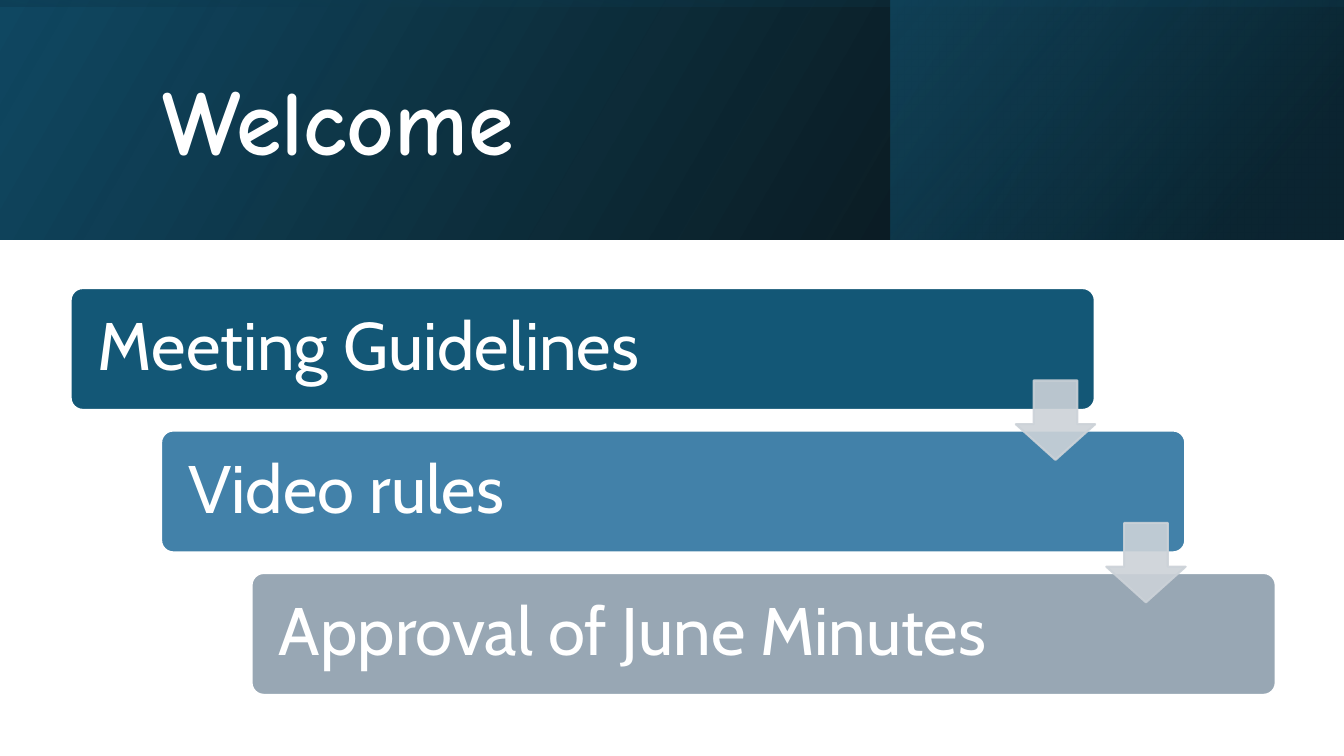
"""Build the Welcome slide: a gradient banner above three stepped agenda bars."""
import pptx
import pptx.util
import pptx.dml.color
import pptx.enum.shapes
import pptx.enum.text
import pptx.oxml
import pptx.oxml.ns
from pptx.util import Cm

SHAPES = pptx.enum.shapes.MSO_SHAPE


def color(value):
    return pptx.dml.color.RGBColor.from_string(value)


def format_text(box, font, size, bold):
    frame = box.text_frame
    frame.word_wrap = True
    frame.vertical_anchor = pptx.enum.text.MSO_ANCHOR.MIDDLE
    para = frame.paragraphs[0]
    para.alignment = pptx.enum.text.PP_ALIGN.LEFT
    para.line_spacing = 0.9
    for span in para.runs:
        span.font.name = font
        span.font.size = pptx.util.Pt(size)
        span.font.bold = bold
        span.font.color.rgb = color("FFFFFF")


deck = pptx.Presentation()
deck.slide_width, deck.slide_height = Cm(33.87), Cm(19.05)
page = deck.slides.add_slide(deck.slide_layouts[5])

# Each banner: left, top, width, height, rotation, gradient angle, (position, color, opacity) stops
banners = [
    (0, 0, 33.87, 6.03, 0, 330, [(0, "000000", 96), (100, "104862", 100)]),
    (22.45, 0, 11.4, 6.03, 0, 320, [(19, "0B3041", 68), (100, "156082", 48)]),
    (13.92, -13.92, 6.03, 33.87, 270, 350, [(23, "104862", 16), (99, "000000", 45)]),
]
for left, top, width, height, rotation, angle, stops in banners:
    banner = page.shapes.add_shape(SHAPES.RECTANGLE, Cm(left), Cm(top), Cm(width), Cm(height))
    banner.shadow.inherit = False
    banner.line.fill.background()
    banner.rotation = rotation
    properties = banner._element.spPr
    properties.find(pptx.oxml.ns.qn("a:xfrm")).set("flipH", "1")
    stop_xml = "".join(
        f'<a:gs pos="{position * 1000}"><a:srgbClr val="{value}">'
        f'<a:alpha val="{opacity * 1000}"/></a:srgbClr></a:gs>'
        for position, value, opacity in stops
    )
    gradient = pptx.oxml.parse_xml(
        f'<a:gradFill {pptx.oxml.ns.nsdecls("a")} rotWithShape="1"><a:gsLst>{stop_xml}</a:gsLst>'
        f'<a:lin ang="{angle * 60000}" scaled="0"/></a:gradFill>'
    )
    properties.find(pptx.oxml.ns.qn("a:prstGeom")).addnext(gradient)

title = page.shapes.title
title.left, title.top, title.width, title.height = Cm(3.84), Cm(0.97), Cm(27), Cm(4.37)
title.text_frame.text = "Welcome"
format_text(title, "Comic Neue", 66, True)
page.shapes._spTree.append(title._element)

step_x, step_y = 2.28, 3.59
agenda = [
    ("Meeting Guidelines", "135776"),
    ("Video rules", "4281A9"),
    ("Approval of June Minutes", "98A7B4"),
]
for index, (label, shade) in enumerate(agenda):
    bar = page.shapes.add_shape(
        SHAPES.ROUNDED_RECTANGLE,
        Cm(1.78 + index * step_x), Cm(7.26 + index * step_y), Cm(25.81), Cm(3.07),
    )
    bar.adjustments[0] = 0.1
    bar.shadow.inherit = False
    bar.fill.solid()
    bar.fill.fore_color.rgb = color(shade)
    bar.line.color.rgb = color("FFFFFF")
    bar.line.width = pptx.util.Pt(1.5)
    bar.text_frame.text = label
    bar.text_frame.margin_left = Cm(0.6)
    format_text(bar, "Cabin", 48, False)

for index in range(len(agenda) - 1):
    arrow = page.shapes.add_shape(
        SHAPES.DOWN_ARROW,
        Cm(25.6 + index * step_x), Cm(9.59 + index * step_y), Cm(2), Cm(2),
    )
    arrow.adjustments[0], arrow.adjustments[1] = 0.45, 0.55
    arrow.adjustments[0], arrow.adjustments[1] = 0.55, 0.45
    arrow.shadow.inherit = False
    arrow.fill.solid()
    arrow.fill.fore_color.rgb = color("CCD2D8")
    arrow.line.color.rgb = color("CCD2D8")
    arrow.line.width = pptx.util.Pt(1.5)
    for tint in arrow._element.spPr.iter(pptx.oxml.ns.qn("a:srgbClr")):
        tint.append(pptx.oxml.parse_xml(f'<a:alpha {pptx.oxml.ns.nsdecls("a")} val="90000"/>'))

deck.save("out.pptx")
